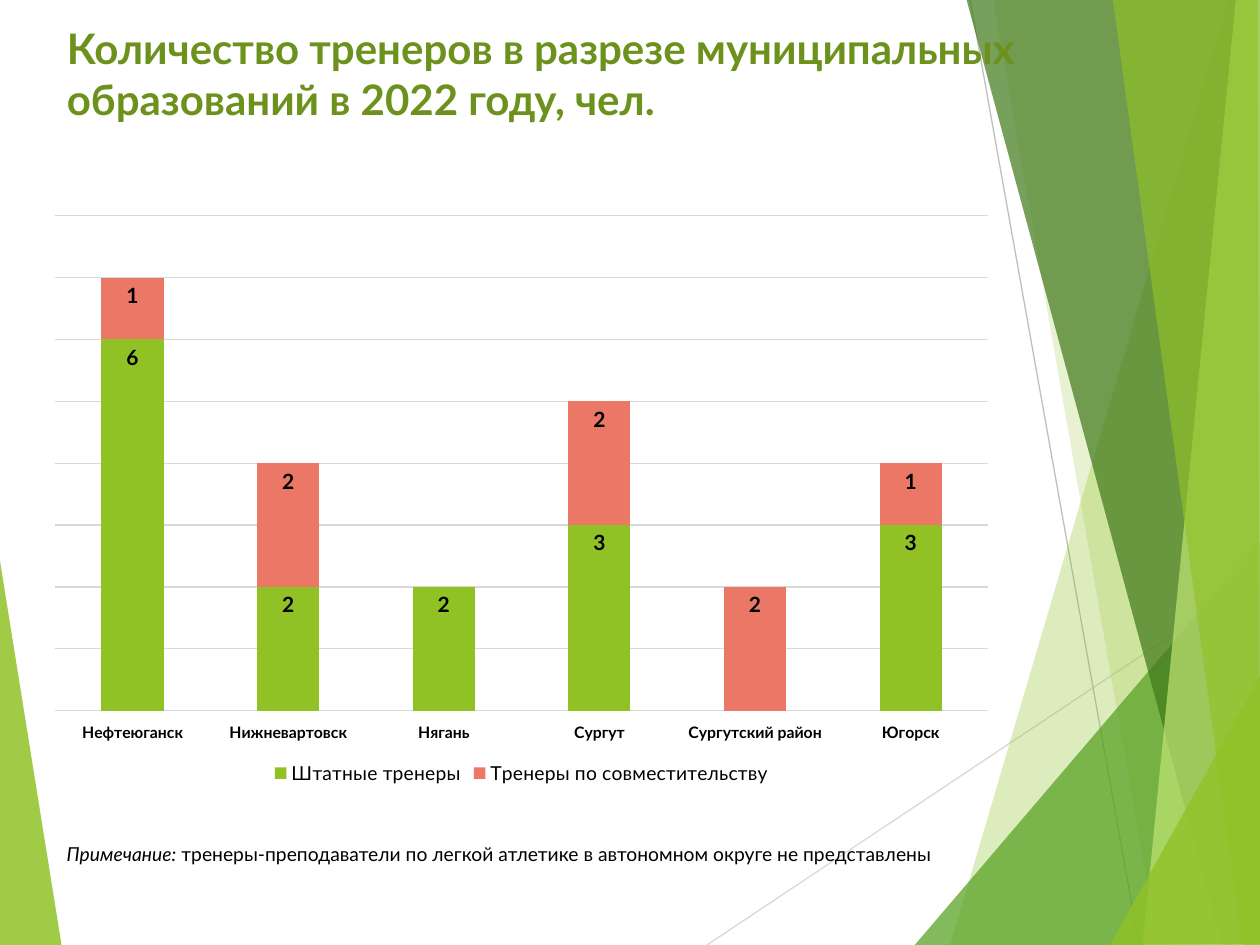
from lxml import etree
from pptx import Presentation
from pptx.chart.data import CategoryChartData as ChartData
from pptx.dml.color import RGBColor
from pptx.enum.chart import XL_CHART_TYPE as Kind, XL_LABEL_POSITION as Spot
from pptx.enum.chart import XL_LEGEND_POSITION as Side, XL_TICK_LABEL_POSITION as Tick
from pptx.enum.chart import XL_TICK_MARK as Mark
from pptx.enum.shapes import MSO_CONNECTOR as Wire
from pptx.enum.text import MSO_ANCHOR as Anchor, MSO_AUTO_SIZE as Fit, PP_ALIGN as Align
from pptx.oxml import parse_xml
from pptx.oxml.ns import qn
from pptx.util import Pt

GREEN, GRAY = "90C226", "D9D9D9"


def rgb(code):
    return RGBColor.from_string(code)


def style(font, size, color="000000", bold=False):
    font.name, font.size, font.bold = "Lato", Pt(size), bold
    font.color.rgb = rgb(color)


prs = Presentation()
prs.slide_width, prs.slide_height = Pt(720), Pt(540)
slide = prs.slides.add_slide(prs.slide_layouts[5])
shapes = slide.shapes

# Backdrop: two thin lines between translucent facets, back to front
rays = [(404, 540, 720.7, 329, GRAY), (554.4, 0, 650.9, 540, "BFBFBF")]
facets = [
    (GREEN, 85, [(-0.7, 316), (35.3, 540.7), (-0.7, 540)]),
    (GREEN, 30, [(702, 0), (543, 540), (721.4, 540.7), (720.7, 0.7)]),
    (GREEN, 20, [(567.4, -0.7), (661.7, 540), (720.7, 540), (720.7, -0.7)]),
    ("54A021", 72, [(522.7, 540), (720, 309), (720.7, 540)]),
    ("3F7819", 70, [(552.2, -0.7), (698.4, 540), (720.7, 539.3), (720.7, -0.7)]),
    ("C0E474", 70, [(706.3, -0.7), (653, 540), (720.7, 540), (720, -0.7)]),
    (GREEN, 65, [(635.8, -0.7), (710, 540), (720, 540), (718.6, -0.7)]),
    (GREEN, 80, [(634.3, 540), (720.7, 385.2), (720.7, 539.3)]),
]
for x1, y1, x2, y2, color in rays:
    ray = shapes.add_connector(Wire.STRAIGHT, Pt(x1), Pt(y1), Pt(x2), Pt(y2))
    ray.line.color.rgb, ray.line.width = rgb(color), Pt(0.75)
    etree.SubElement(ray._element.spPr, qn("a:effectLst"))
for color, alpha, dots in facets:
    dots = [(Pt(x), Pt(y)) for x, y in dots]
    path = shapes.build_freeform(*dots[0])
    path.add_line_segments(dots[1:], close=True)
    facet = path.convert_to_shape()
    facet.shadow.inherit = False
    facet.line.fill.background()
    facet.fill.solid()
    facet.fill.fore_color.rgb = rgb(color)
    tint = facet._element.spPr.find(".//" + qn("a:srgbClr"))
    etree.SubElement(tint, qn("a:alpha"), val=str(alpha * 1000))

# Title, brought in front of the backdrop
title = shapes.title
title.left, title.top, title.width, title.height = Pt(31), Pt(9.4), Pt(561.6), Pt(90)
frame = title.text_frame
frame.text = "Количество тренеров в разрезе муниципальных образований в 2022 году, чел."
frame.vertical_anchor, frame.auto_size, frame.word_wrap = Anchor.TOP, Fit.NONE, True
frame.paragraphs[0].alignment = Align.LEFT
style(frame.paragraphs[0].runs[0].font, 24, "6C921D", True)
shapes._spTree.append(title._element)

# Stacked columns of staff and part-time coaches
data = ChartData()
data.categories = ["Нефтеюганск", "Нижневартовск", "Нягань", "Сургут",
                   "Сургутский район", "Югорск"]
data.add_series("Штатные тренеры", [6, 2, 2, 3, None, 3])
data.add_series("Тренеры по совместительству", [1, 2, None, 2, 2, 1])
chart = shapes.add_chart(Kind.COLUMN_STACKED, Pt(20.2), Pt(116.6),
                         Pt(555.8), Pt(334.8), data).chart
style(chart.font, 10)
chart.has_title = False
chart.has_legend = True
chart.legend.position, chart.legend.include_in_layout = Side.BOTTOM, False
style(chart.legend.font, 11)

plot = chart.plots[0]
plot.gap_width, plot.overlap, plot.vary_by_categories = 150, 100, False
for series, color in zip(plot.series, [GREEN, "EB7766"]):
    series.format.fill.solid()
    series.format.fill.fore_color.rgb = rgb(color)
    labels = series.data_labels
    labels.show_value, labels.position = True, Spot.INSIDE_END
    style(labels.font, 12, bold=True)

names, scale = chart.category_axis, chart.value_axis
names.major_tick_mark = names.minor_tick_mark = Mark.NONE
names.tick_label_position = Tick.LOW
style(names.tick_labels.font, 9, bold=True)
scale.visible, scale.has_major_gridlines = False, True
scale.minimum_scale, scale.maximum_scale, scale.major_unit = 0, 8, 1
for line in (names.format.line, scale.major_gridlines.format.line):
    line.color.rgb, line.width = rgb(GRAY), Pt(0.75)

# Fixed inner plot area, as shares of the chart
box = "".join(f'<c:{tag} val="{val}"/>' for tag, val in [
    ("layoutTarget", "inner"), ("xMode", "edge"), ("yMode", "edge"),
    ("x", 0.02), ("y", 0.02), ("w", 0.96), ("h", 0.845)])
area = chart._chartSpace.find(".//" + qn("c:plotArea"))
for old in area.findall(qn("c:layout")):
    area.remove(old)
area.insert(0, parse_xml(
    '<c:layout xmlns:c="http://schemas.openxmlformats.org/drawingml/2006/chart">'
    f"<c:manualLayout>{box}</c:manualLayout></c:layout>"))

# Footnote
note = shapes.add_textbox(Pt(31), Pt(478), Pt(516), Pt(21)).text_frame
note.word_wrap, note.auto_size = True, Fit.SHAPE_TO_FIT_TEXT
for text, slant in [
        ("Примечание:", True),
        (" тренеры-преподаватели по легкой атлетике в автономном округе не представлены", False)]:
    run = note.paragraphs[0].add_run()
    run.text = text
    style(run.font, 11)
    run.font.italic = slant

prs.save("out.pptx")
